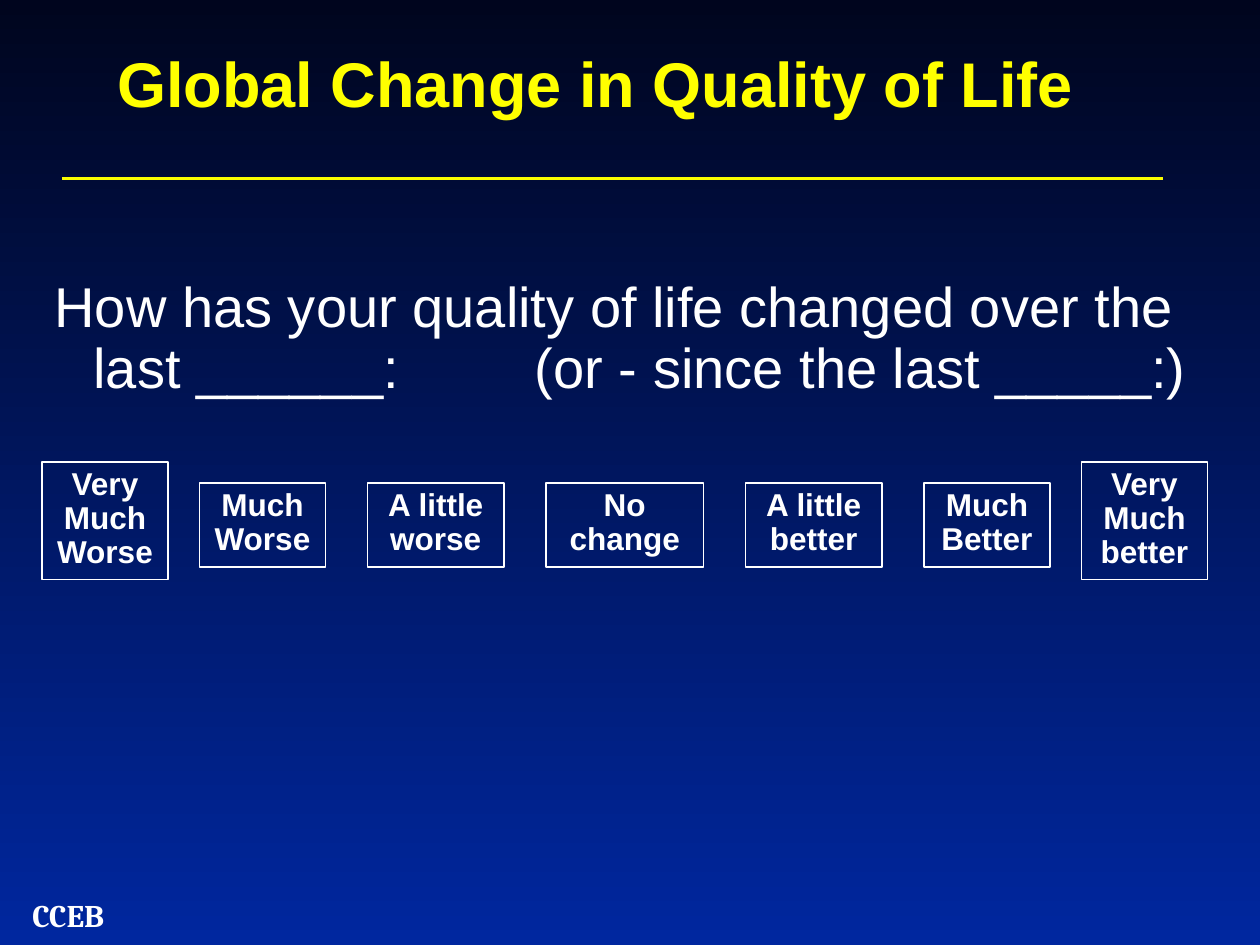
from dataclasses import dataclass

from lxml import etree
from pptx import Presentation
from pptx.dml.color import RGBColor
from pptx.enum.shapes import MSO_CONNECTOR, MSO_SHAPE
from pptx.enum.text import MSO_ANCHOR, PP_ALIGN
from pptx.oxml.ns import qn
from pptx.util import Inches, Pt

LEFT, CENTER = PP_ALIGN.LEFT, PP_ALIGN.CENTER
TOP, MIDDLE = MSO_ANCHOR.TOP, MSO_ANCHOR.MIDDLE
RECTANGLE = MSO_SHAPE.RECTANGLE
STRAIGHT = MSO_CONNECTOR.STRAIGHT

WIDTH, HEIGHT = Inches(9.99), Inches(7.49)
COLUMN, ROW = WIDTH / 120, HEIGHT / 90
WHITE, YELLOW, RULE_YELLOW = "FFFFFF", "FFFF00", "FAFD00"
NIGHT, BLUE = "00051E", "00279F"


@dataclass(frozen=True)
class Area:
    column: float
    row: float
    columns: float
    rows: float

    def frame(self) -> tuple[int, int, int, int]:
        return (
            round(self.column * COLUMN),
            round(self.row * ROW),
            round(self.columns * COLUMN),
            round(self.rows * ROW),
        )


@dataclass(frozen=True)
class TextStyle:
    size: int
    color: str = WHITE
    font: str = "Arial"
    bold: bool = True
    align: int = CENTER
    anchor: int = TOP
    spacing: float = 0.9
    wrap: bool = True


@dataclass(frozen=True)
class Answer:
    text: str
    column: int
    columns: int
    tall: bool = False

    def area(self) -> Area:
        row, rows = (44, 11.2) if self.tall else (46, 8)
        return Area(self.column, row, self.columns, rows)


TITLE_STYLE = TextStyle(36, YELLOW, align=LEFT, anchor=MIDDLE, spacing=0.85, wrap=False)
QUESTION_STYLE = TextStyle(32, bold=False, align=LEFT)
ANSWER_STYLE = TextStyle(18)
FOOTER_STYLE = TextStyle(18, font="Cambria", spacing=0.8)

ANSWERS = [
    Answer("Very Much Worse", 4, 12, tall=True),
    Answer("Much Worse", 19, 12),
    Answer("A little worse", 35, 13),
    Answer("No change", 52, 15),
    Answer("A little better", 71, 13),
    Answer("Much Better", 88, 12),
    Answer("Very Much better", 103, 12, tall=True),
]


def color(value: str) -> RGBColor:
    return RGBColor.from_string(value)


def write(box, text: str, style: TextStyle):
    frame = box.text_frame
    frame.text = text
    frame.word_wrap = style.wrap
    frame.vertical_anchor = style.anchor
    para = frame.paragraphs[0]
    para.alignment = style.align
    para.line_spacing = style.spacing
    para.space_before = Pt(0)
    for span in para.runs:
        span.font.name = style.font
        span.font.size = Pt(style.size)
        span.font.bold = style.bold
        span.font.color.rgb = color(style.color)
    return para


def paint_background(page) -> None:
    fill = page.background.fill
    fill.gradient()
    fill.gradient_angle = 270
    for stop, shade in zip(fill.gradient_stops, (NIGHT, BLUE)):
        stop.color.rgb = color(shade)


def add_title(page, text: str, area: Area) -> None:
    title = page.shapes.title
    title.left, title.top, title.width, title.height = area.frame()
    write(title, text, TITLE_STYLE)
    frame = title.text_frame
    frame.margin_left = frame.margin_right = Inches(0.07)
    frame.margin_top = frame.margin_bottom = Inches(0.03)


def add_rule(page, area: Area) -> None:
    left, top, width, height = area.frame()
    rule = page.shapes.add_connector(STRAIGHT, left, top, left + width, top + height)
    rule.line.color.rgb = color(RULE_YELLOW)
    rule.line.width = Pt(2)
    etree.SubElement(rule._element.spPr, qn("a:effectLst"))


def add_text(page, text: str, area: Area, style: TextStyle):
    return write(page.shapes.add_textbox(*area.frame()), text, style)


def add_answer(page, answer: Answer) -> None:
    box = page.shapes.add_shape(RECTANGLE, *answer.area().frame())
    box.shadow.inherit = False
    box.fill.background()
    box.line.color.rgb = color(WHITE)
    box.line.width = Pt(1)
    write(box, answer.text, ANSWER_STYLE)


def main() -> None:
    deck = Presentation()
    deck.slide_width, deck.slide_height = WIDTH, HEIGHT
    page = deck.slides.add_slide(deck.slide_layouts.get_by_name("Title Only"))
    paint_background(page)
    add_rule(page, Area(5.9, 17, 104.9, 0))
    add_text(page, "CCEB", Area(0, 85.4, 13, 4.45), FOOTER_STYLE)
    add_title(page, "Global Change in Quality of Life", Area(10.33, 5, 93.7, 6.85))
    question = add_text(
        page,
        "How has your quality of life changed over the last ______: \t\t(or - since the last _____:)",
        Area(4, 26, 114, 47.5),
        QUESTION_STYLE,
    )
    properties = question._p.get_or_add_pPr()
    properties.set("marL", str(Inches(0.31)))
    properties.set("indent", str(-Inches(0.31)))
    for answer in ANSWERS:
        add_answer(page, answer)
    deck.save("out.pptx")


if __name__ == "__main__":
    main()
